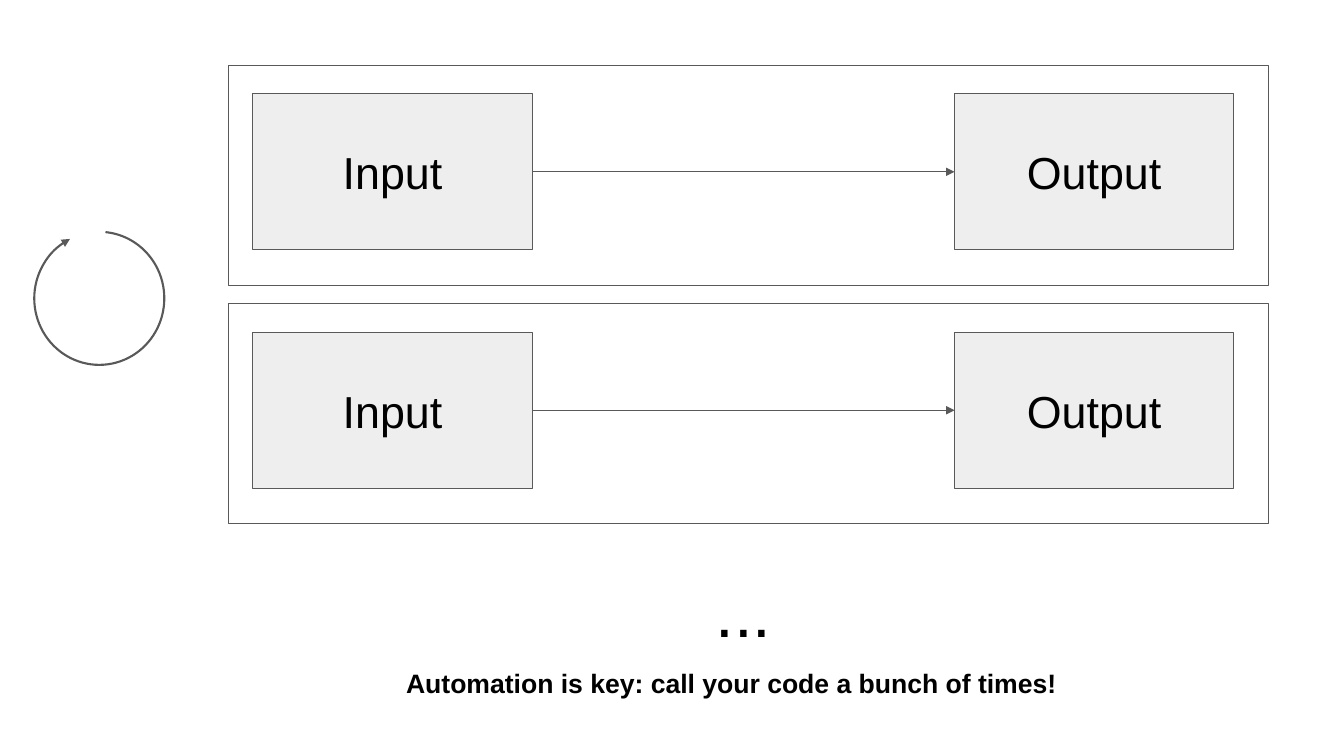
"""Build a slide showing repeated input-to-output runs driven by a loop."""
from dataclasses import dataclass

from lxml import etree
from pptx import Presentation
from pptx.dml.color import RGBColor
from pptx.enum.shapes import MSO_CONNECTOR, MSO_SHAPE
from pptx.enum.text import MSO_ANCHOR, MSO_AUTO_SIZE, PP_ALIGN
from pptx.oxml.ns import qn
from pptx.shapes.autoshape import Shape
from pptx.shapes.base import BaseShape
from pptx.shapes.connector import Connector
from pptx.shapes.shapetree import SlideShapes
from pptx.util import Inches, Length, Pt

RECTANGLE = MSO_SHAPE.RECTANGLE
ARC = MSO_SHAPE.ARC
STRAIGHT = MSO_CONNECTOR.STRAIGHT
CENTER = PP_ALIGN.CENTER
TOP = MSO_ANCHOR.TOP
MIDDLE = MSO_ANCHOR.MIDDLE
GROW = MSO_AUTO_SIZE.SHAPE_TO_FIT_TEXT
LEFT_SIDE, RIGHT_SIDE = 1, 3


@dataclass(frozen=True)
class Theme:
    font: str = "Arial"
    ink: str = "000000"
    outline: str = "595959"
    frame_fill: str = "FFFFFF"
    step_fill: str = "EEEEEE"
    thin: float = 0.75
    thick: float = 1.5
    step_size: int = 32
    ellipsis_size: int = 48
    message_size: int = 19


@dataclass(frozen=True)
class Area:
    column: float
    row: float
    columns: float
    rows: float

    def lower(self, rows: float) -> "Area":
        return Area(self.column, self.row + rows, self.columns, self.rows)

    def place(self) -> tuple[Length, ...]:
        return tuple(cells(n) for n in (self.column, self.row, self.columns, self.rows))


@dataclass(frozen=True)
class Step:
    label: str
    area: Area


@dataclass(frozen=True)
class Caption:
    words: str
    area: Area
    size: int
    bold: bool = False


THEME = Theme()
CELL = 0.1
SLIDE_COLUMNS, SLIDE_ROWS = 133.33, 75
PADDING = 1.3
RUNS = 2
RUN_PITCH = 23.65
FRAME = Area(22.7, 6.5, 103.1, 21.8)
INPUT = Step("Input", Area(25.1, 9.3, 27.7, 15.5))
OUTPUT = Step("Output", Area(94.7, 9.3, 27.7, 15.5))
LOOP = Area(3.4, 23, 12.9, 13.2)
LOOP_ANGLES = (165.205, 146.239)
ELLIPSIS = Caption("...", Area(65.8, 55.3, 15.9, 10.8), THEME.ellipsis_size)
MESSAGE = Caption(
    "Automation is key: call your code a bunch of times!",
    Area(33.2, 64.9, 78.7, 5.9),
    THEME.message_size,
    bold=True,
)


def cells(count: float) -> Length:
    return Inches(count * CELL)


def write(holder: Shape, words: str, *, size: int, bold: bool = False,
          anchor: MSO_ANCHOR = TOP) -> None:
    frame = holder.text_frame
    frame.word_wrap = True
    frame.vertical_anchor = anchor
    frame.margin_left = frame.margin_right = cells(PADDING)
    frame.margin_top = frame.margin_bottom = cells(PADDING)
    paragraph = frame.paragraphs[0]
    paragraph.alignment = CENTER
    run = paragraph.add_run()
    run.text = words
    run.font.name = THEME.font
    run.font.size = Pt(size)
    run.font.bold = bold
    run.font.color.rgb = RGBColor.from_string(THEME.ink)


def stroke(target: Shape | Connector, width: float) -> None:
    target.line.color.rgb = RGBColor.from_string(THEME.outline)
    target.line.width = Pt(width)


def add_arrowhead(target: BaseShape) -> None:
    outline = target.element.spPr.find(qn("a:ln"))
    etree.SubElement(outline, qn("a:tailEnd"), type="triangle")


def draw_box(shapes: SlideShapes, area: Area, fill: str) -> Shape:
    box = shapes.add_shape(RECTANGLE, *area.place())
    box.shadow.inherit = False
    box.fill.solid()
    box.fill.fore_color.rgb = RGBColor.from_string(fill)
    stroke(box, THEME.thin)
    return box


def draw_step(shapes: SlideShapes, step: Step, drop: float) -> Shape:
    box = draw_box(shapes, step.area.lower(drop), THEME.step_fill)
    write(box, step.label, size=THEME.step_size, anchor=MIDDLE)
    return box


def draw_run(shapes: SlideShapes, drop: float) -> None:
    draw_box(shapes, FRAME.lower(drop), THEME.frame_fill)
    source = draw_step(shapes, INPUT, drop)
    result = draw_step(shapes, OUTPUT, drop)
    flow = shapes.add_connector(STRAIGHT, 0, 0, 0, 0)
    flow.begin_connect(source, RIGHT_SIDE)
    flow.end_connect(result, LEFT_SIDE)
    stroke(flow, THEME.thin)
    add_arrowhead(flow)
    etree.SubElement(flow.element.spPr, qn("a:effectLst"))


def draw_loop(shapes: SlideShapes) -> None:
    loop = shapes.add_shape(ARC, *LOOP.place())
    loop.shadow.inherit = False
    loop.fill.background()
    for index, angle in enumerate(LOOP_ANGLES):
        loop.adjustments[index] = angle
    stroke(loop, THEME.thick)
    add_arrowhead(loop)


def draw_caption(shapes: SlideShapes, caption: Caption) -> None:
    holder = shapes.add_textbox(*caption.area.place())
    write(holder, caption.words, size=caption.size, bold=caption.bold)
    holder.text_frame.auto_size = GROW


def main() -> None:
    deck = Presentation()
    deck.slide_width = cells(SLIDE_COLUMNS)
    deck.slide_height = cells(SLIDE_ROWS)
    shapes = deck.slides.add_slide(deck.slide_layouts[6]).shapes
    for index in range(RUNS):
        draw_run(shapes, index * RUN_PITCH)
    draw_caption(shapes, ELLIPSIS)
    draw_loop(shapes)
    draw_caption(shapes, MESSAGE)
    deck.save("out.pptx")


if __name__ == "__main__":
    main()
